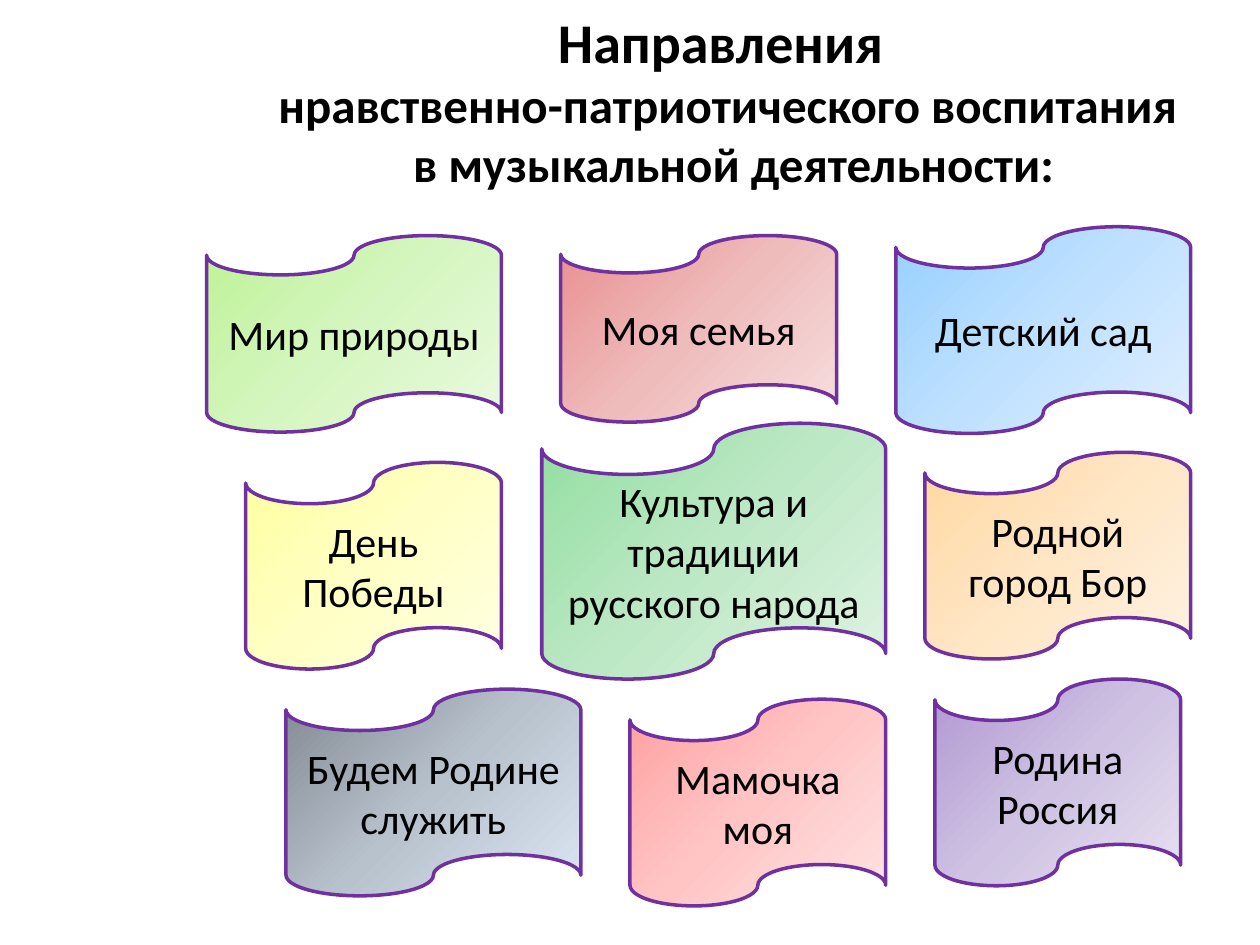
from copy import deepcopy

from lxml.etree import SubElement
from pptx import Presentation
from pptx.dml.color import RGBColor
from pptx.enum.shapes import MSO_SHAPE
from pptx.enum.text import MSO_ANCHOR, MSO_AUTO_SIZE, PP_ALIGN
from pptx.oxml import parse_xml
from pptx.oxml.ns import nsdecls, qn
from pptx.util import Inches, Pt

FONT = "Calibri"
BLACK = "000000"
PURPLE = "7030A0"

# text, size in points, right indent in inches
TITLE_LINES = [
    ("Направления", 32, 0.2),
    ("нравственно-патриотического воспитания", 28, 0.09),
    ("в музыкальной деятельности:", 28, 0),
]

# text, (left, top, width, height), gradient from top left to bottom right
TOPICS = [
    ("Мир природы", (1.64, 1.87, 2.34, 1.56), ("BEF297", "D5F6C0", "EAFAE0")),
    ("Культура и традиции русского народа", (4.3, 3.36, 2.73, 2.03),
     ("91DEA0", "BDE8C5", "DFF3E3")),
    ("Моя семья", (4.45, 1.87, 2.19, 1.48), ("E98F8F", "EFBCBC", "F7DEDE")),
    ("Детский сад", (7.11, 1.8, 2.34, 1.64), ("96D0FF", "BFE1FF", "E0EFFF")),
    ("Родной город Бор", (7.34, 3.59, 2.11, 1.64), ("FFD8A0", "FFE6C5", "FFF2E3")),
    ("Родина Россия", (7.42, 5.39, 1.95, 1.64), ("B197D2", "CEC1E2", "E7E1F0")),
    ("Мамочка моя", (5, 5.55, 2.03, 1.64), ("FFA0A0", "FFC5C5", "FFE3E3")),
    ("Будем Родине служить", (2.27, 5.47, 2.34, 1.64), ("818890", "B8C2CD", "DAE6F3")),
    ("День Победы", (1.95, 3.67, 2.03, 1.64), ("FFFFA0", "FFFFC5", "FFFFE3")),
]


def color(value):
    return RGBColor.from_string(value)


def format_paragraph(paragraph, size, bold=False):
    paragraph.alignment = PP_ALIGN.CENTER
    font = paragraph.font
    font.name = FONT
    font.size = Pt(size)
    font.bold = bold
    font.color.rgb = color(BLACK)


def outline_text(paragraph, line_color, width):
    properties = paragraph._p.pPr.find(qn("a:defRPr"))
    line = parse_xml(f'<a:ln {nsdecls("a")} w="{Pt(width)}"/>')
    fill = SubElement(line, qn("a:solidFill"))
    SubElement(fill, qn("a:srgbClr"), val=line_color)
    properties.insert(0, line)


def fill_diagonal(shape, colors):
    """Fill with three evenly spaced colours running down to the right."""
    shape.fill.gradient()
    shape.fill.gradient_angle = 315
    stop_list = shape._element.spPr.find(qn("a:gradFill")).find(qn("a:gsLst"))
    stop_list.insert(1, deepcopy(stop_list[0]))
    for index, (stop, value) in enumerate(zip(shape.fill.gradient_stops, colors)):
        stop.position = index / 2
        stop.color.rgb = color(value)


def set_title(page):
    title = page.shapes.title
    title.left, title.top = Inches(2.07), Inches(0.01)
    title.width, title.height = Inches(7.5), Inches(1.99)
    frame = title.text_frame
    frame.word_wrap = True
    frame.auto_size = MSO_AUTO_SIZE.NONE
    frame.vertical_anchor = MSO_ANCHOR.TOP
    frame.text = "\n".join(text for text, _, _ in TITLE_LINES)
    for paragraph, (_, size, indent) in zip(frame.paragraphs, TITLE_LINES):
        format_paragraph(paragraph, size, bold=True)
        paragraph._p.pPr.set("marR", str(Inches(indent)))


def add_topic(page, text, bounds, colors):
    tape = page.shapes.add_shape(MSO_SHAPE.FLOWCHART_PUNCHED_TAPE, *map(Inches, bounds))
    tape.shadow.inherit = False
    fill_diagonal(tape, colors)
    tape.line.color.rgb = color(PURPLE)
    tape.line.width = Pt(2)
    frame = tape.text_frame
    frame.word_wrap = True
    frame.vertical_anchor = MSO_ANCHOR.MIDDLE
    frame.text = text
    paragraph = frame.paragraphs[0]
    format_paragraph(paragraph, 24)
    outline_text(paragraph, PURPLE, 0.75)


def main():
    deck = Presentation()
    deck.slide_width, deck.slide_height = Inches(10), Inches(7.5)
    page = deck.slides.add_slide(deck.slide_layouts[5])
    set_title(page)
    for text, bounds, colors in TOPICS:
        add_topic(page, text, bounds, colors)
    deck.save("out.pptx")


if __name__ == "__main__":
    main()
